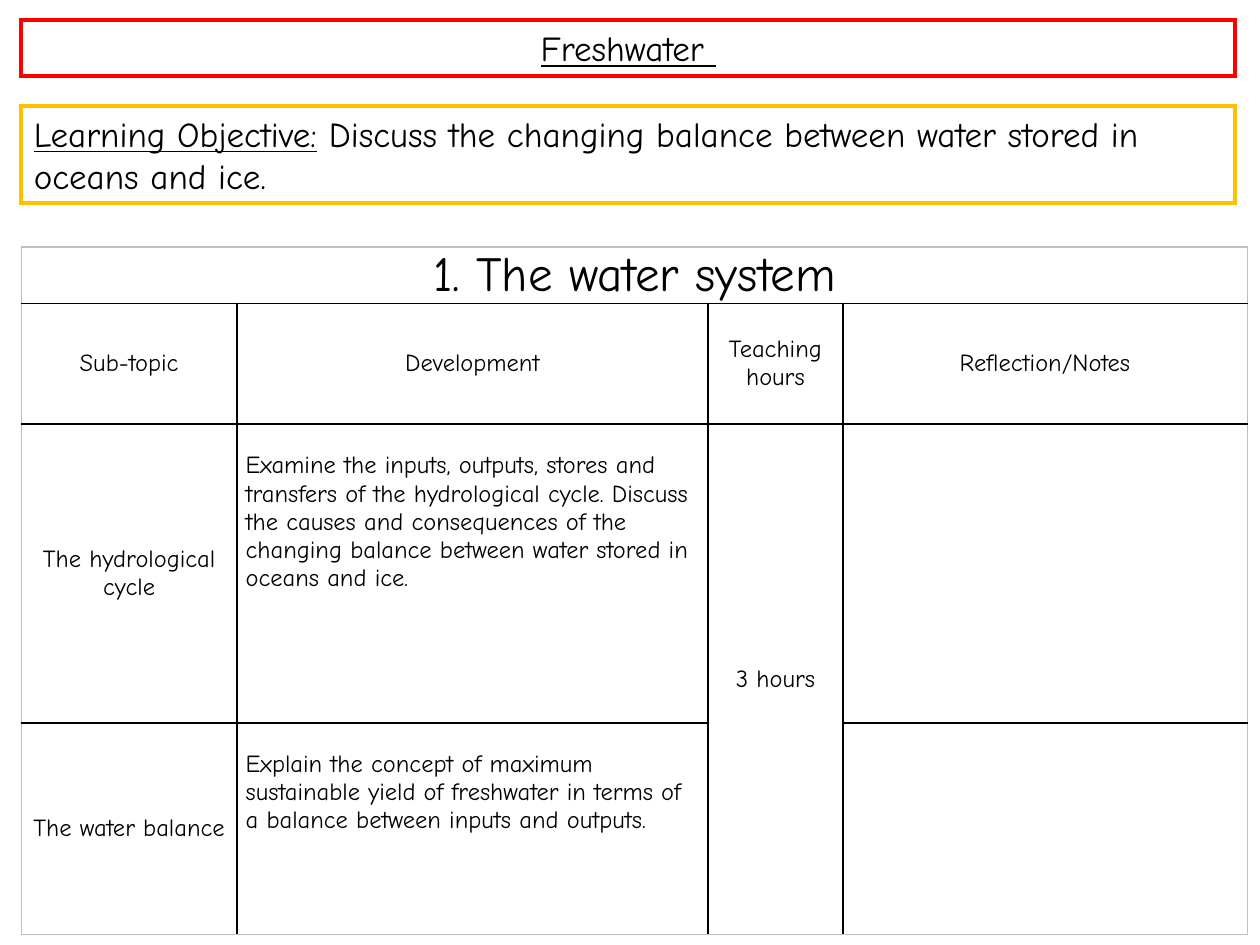
from dataclasses import dataclass

from lxml import etree
from pptx import Presentation
from pptx.dml.color import RGBColor
from pptx.enum.shapes import MSO_SHAPE
from pptx.enum.text import MSO_ANCHOR, MSO_AUTO_SIZE, PP_ALIGN
from pptx.oxml.ns import qn
from pptx.util import Inches, Pt

RECTANGLE = MSO_SHAPE.RECTANGLE
TOP, MIDDLE = MSO_ANCHOR.TOP, MSO_ANCHOR.MIDDLE
LEFT, CENTER = PP_ALIGN.LEFT, PP_ALIGN.CENTER
FIXED_SIZE = MSO_AUTO_SIZE.NONE


@dataclass(frozen=True)
class Theme:
    font: str = "Comic Neue"
    ink: str = "000000"
    outer_border: str = "BFBFBF"
    title_frame: str = "FF0000"
    objective_frame: str = "FFC000"
    heading_size: int = 20
    unit_size: int = 28
    table_size: int = 14
    frame_width: float = 2.25
    border_width: int = 1


@dataclass(frozen=True)
class Span:
    text: str
    underline: bool = False


THEME = Theme()


@dataclass(frozen=True)
class CellText:
    row: int
    column: int
    text: str
    size: int = THEME.table_size
    align: int = CENTER
    anchor: int = MIDDLE
    top: float = 0


MARGIN = 0.17
FRAME_WIDTH = 9.63
COLUMN_WIDTHS = (1.71, 3.74, 1.07, 3.21)
ROW_HEIGHTS = (0.43, 0.96, 2.37, 1.68)
HEADERS = ("Sub-topic", "Development", "Teaching hours", "Reflection/Notes")
SUBTOPICS = (
    ("The hydrological cycle",
     "Examine the inputs, outputs, stores and transfers of the hydrological cycle. "
     "Discuss the causes and consequences of the changing balance between water "
     "stored in oceans and ice."),
    ("The water balance",
     "Explain the concept of maximum sustainable yield of freshwater in terms of "
     "a balance between inputs and outputs."),
)


def add_span(para, span: Span, size: int) -> None:
    run = para.add_run()
    run.text = span.text
    run.font.name = THEME.font
    run.font.size = Pt(size)
    run.font.underline = span.underline
    run.font.color.rgb = RGBColor.from_string(THEME.ink)


def format_frame(box, top: float, height: float, color: str, align, spans: list[Span]) -> None:
    """Place a box across the page, outline it and fill in its text."""
    box.left, box.top = Inches(MARGIN), Inches(top)
    box.width, box.height = Inches(FRAME_WIDTH), Inches(height)
    box.fill.background()
    box.line.color.rgb = RGBColor.from_string(color)
    box.line.width = Pt(THEME.frame_width)
    outline = box._element.spPr.find(qn("a:ln"))
    etree.SubElement(outline, qn("a:miter"), lim="800000")
    frame = box.text_frame
    frame.word_wrap = True
    frame.auto_size = FIXED_SIZE
    frame.vertical_anchor = TOP
    para = frame.paragraphs[0]
    para.alignment = align
    for span in spans:
        add_span(para, span, THEME.heading_size)


def format_cell(cell, row: int, column: int) -> None:
    """Clear the fill, set the margins and draw borders, paler at the table's edge."""
    cell.margin_left = cell.margin_right = Inches(0.07)
    cell.margin_top = cell.margin_bottom = 0
    is_outer = {
        "a:lnL": column == 0,
        "a:lnR": column + cell.span_width == len(COLUMN_WIDTHS),
        "a:lnT": row == 0,
        "a:lnB": row + cell.span_height == len(ROW_HEIGHTS),
    }
    properties = cell._tc.get_or_add_tcPr()
    for side, outer in is_outer.items():
        border = etree.SubElement(properties, qn(side), w=str(Pt(THEME.border_width)))
        fill = etree.SubElement(border, qn("a:solidFill"))
        color = THEME.outer_border if outer else THEME.ink
        etree.SubElement(fill, qn("a:srgbClr"), val=color)
    cell.fill.background()


def write_cell(table, entry: CellText) -> None:
    cell = table.cell(entry.row, entry.column)
    cell.vertical_anchor = entry.anchor
    cell.margin_top = Inches(entry.top)
    para = cell.text_frame.paragraphs[0]
    para.alignment = entry.align
    add_span(para, Span(entry.text), entry.size)


def add_syllabus_table(page) -> None:
    table = page.shapes.add_table(
        len(ROW_HEIGHTS), len(COLUMN_WIDTHS), Inches(MARGIN), Inches(1.96),
        Inches(sum(COLUMN_WIDTHS)), Inches(sum(ROW_HEIGHTS))).table
    table.first_row = table.horz_banding = False
    for column, width in zip(table.columns, COLUMN_WIDTHS):
        column.width = Inches(width)
    for row, height in zip(table.rows, ROW_HEIGHTS):
        row.height = Inches(height)
    table.cell(0, 0).merge(table.cell(0, 3))
    table.cell(2, 2).merge(table.cell(3, 2))
    for index, cell in enumerate(table.iter_cells()):
        format_cell(cell, *divmod(index, len(COLUMN_WIDTHS)))

    entries = [CellText(0, 0, "1. The water system", THEME.unit_size),
               CellText(2, 2, "3 hours")]
    entries += [CellText(1, column, text) for column, text in enumerate(HEADERS)]
    for row, (subtopic, development) in enumerate(SUBTOPICS, start=2):
        entries.append(CellText(row, 0, subtopic))
        entries.append(CellText(row, 1, development, align=LEFT, anchor=TOP, top=0.22))
    for entry in entries:
        write_cell(table, entry)


def main() -> None:
    deck = Presentation()
    deck.slide_width, deck.slide_height = Inches(10), Inches(7.5)
    page = deck.slides.add_slide(deck.slide_layouts[5])

    format_frame(page.shapes.title, 0.16, 0.44, THEME.title_frame, CENTER,
                 [Span("Freshwater ", underline=True)])
    add_syllabus_table(page)
    objective = page.shapes.add_shape(RECTANGLE, 0, 0, 0, 0)
    objective.shadow.inherit = False
    format_frame(objective, 0.84, 0.77, THEME.objective_frame, LEFT, [
        Span("Learning Objective:", underline=True),
        Span(" Discuss the changing balance between water stored in oceans and ice."),
    ])
    deck.save("out.pptx")


if __name__ == "__main__":
    main()
